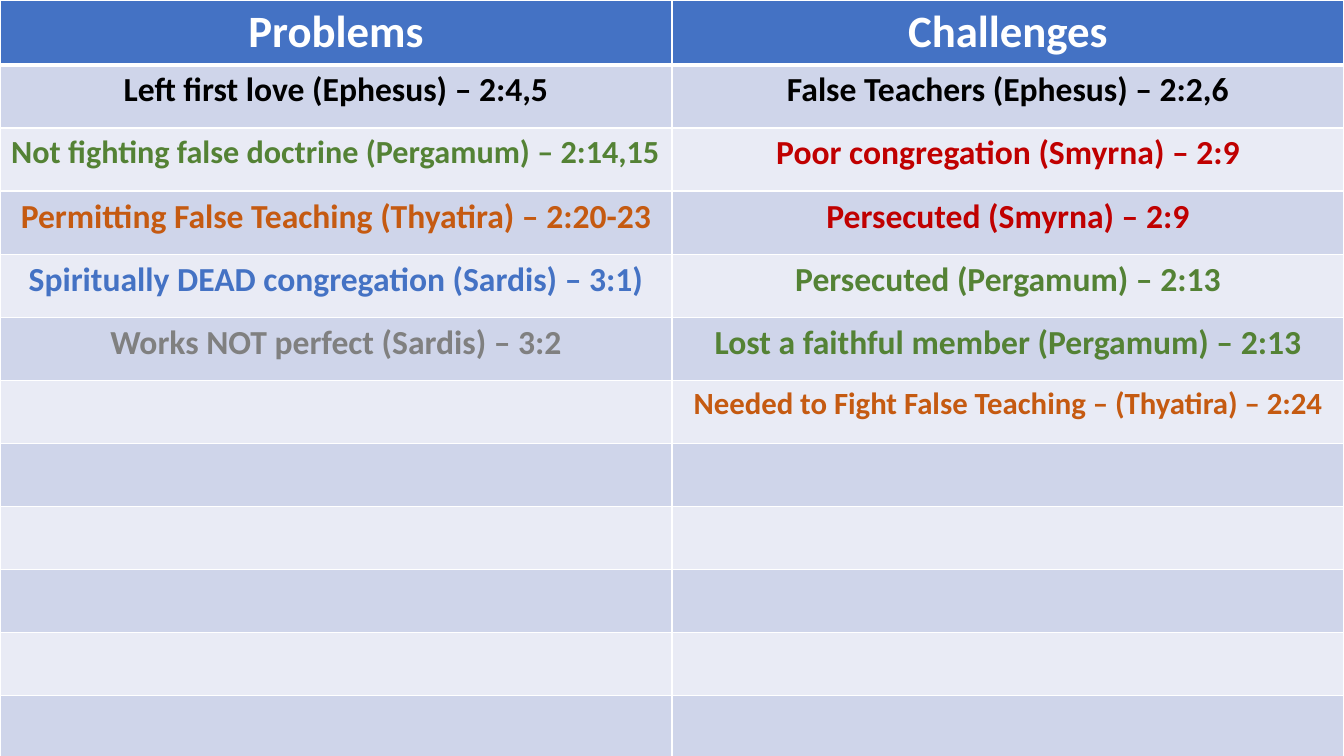
from lxml import etree
from pptx import Presentation
from pptx import util as u
from pptx.dml.color import RGBColor
from pptx.enum import text
from pptx.oxml import ns

WHITE, BLACK, BLUE, GREY = "FFFFFF", "000000", "4472C4", "808080"
GREEN, RED, ORANGE = "548235", "C00000", "C55A11"
BANDS = ("CFD5EA", "E9EBF5")
WIDTH, ROW_HEIGHT, ROW_COUNT = 33.87, 1.59, 12

HEADINGS = ("Problems", "Challenges")
PROBLEMS = [
    ("Left first love (Ephesus) – 2:4,5", BLACK, 24),
    ("Not fighting false doctrine (Pergamum) – 2:14,15", GREEN, 23),
    ("Permitting False Teaching (Thyatira) – 2:20-23", ORANGE, 24),
    ("Spiritually DEAD congregation (Sardis) – 3:1)", BLUE, 24),
    ("Works NOT perfect (Sardis) – 3:2", GREY, 24),
]
CHALLENGES = [
    ("False Teachers (Ephesus) – 2:2,6", BLACK, 24),
    ("Poor congregation (Smyrna) – 2:9", RED, 24),
    ("Persecuted (Smyrna) – 2:9", RED, 24),
    ("Persecuted (Pergamum) – 2:13", GREEN, 24),
    ("Lost a faithful member (Pergamum) – 2:13", GREEN, 24),
    ("Needed to Fight False Teaching – (Thyatira) – 2:24", ORANGE, 22),
]


def rgb(value):
    return RGBColor.from_string(value)


def write(tf, content, font="Calibri", size=24, color=BLACK, bold=True,
          align=text.PP_ALIGN.CENTER):
    p = tf.paragraphs[0]
    p.alignment = align
    r = p.add_run()
    r.text = content
    r.font.name = font
    r.font.size = u.Pt(size)
    r.font.bold = bold
    r.font.color.rgb = rgb(color)


class Deck:
    font = "Calibri"
    border_color = WHITE

    def __init__(self, prs):
        self.s = prs.slides.add_slide(prs.slide_layouts[6])

    def table(self, left, top, width, row_height, rows, columns):
        frame = self.s.shapes.add_table(
            rows, columns, u.Cm(left), u.Cm(top),
            u.Cm(width), u.Cm(row_height * rows))
        for row in frame.table.rows:
            row.height = u.Cm(row_height)
        return frame.table

    def border(self, cell, **widths):
        """Draw cell edges L, R, T and B, given in that order in points."""
        tc_pr = cell._tc.get_or_add_tcPr()
        for i, (side, width) in enumerate(widths.items()):
            ln = etree.Element(ns.qn(f"a:ln{side}"), w=str(u.Pt(width)))
            fill = etree.SubElement(ln, ns.qn("a:solidFill"))
            etree.SubElement(fill, ns.qn("a:srgbClr"), val=self.border_color)
            tc_pr.insert(i, ln)

    def cell(self, cell, fill, content="", top=1, bottom=1, **style):
        cell.fill.solid()
        cell.fill.fore_color.rgb = rgb(fill)
        self.border(cell, L=1, R=1, T=top, B=bottom)
        if content:
            write(cell.text_frame, content, font=self.font, **style)


def main():
    prs = Presentation()
    prs.slide_width, prs.slide_height = u.Cm(WIDTH), u.Cm(19.05)
    deck = Deck(prs)
    table = deck.table(0, 0, WIDTH, ROW_HEIGHT, ROW_COUNT, len(HEADINGS))

    for col, (heading, entries) in enumerate(zip(HEADINGS, (PROBLEMS, CHALLENGES))):
        deck.cell(table.cell(0, col), BLUE, heading, bottom=3, size=32, color=WHITE)
        for row in range(1, ROW_COUNT):
            content, color, size = entries[row - 1] if row <= len(entries) else ("", BLACK, 24)
            deck.cell(table.cell(row, col), BANDS[(row - 1) % 2], content,
                      top=3 if row == 1 else 1, size=size, color=color)

    prs.save("out.pptx")


if __name__ == "__main__":
    main()
